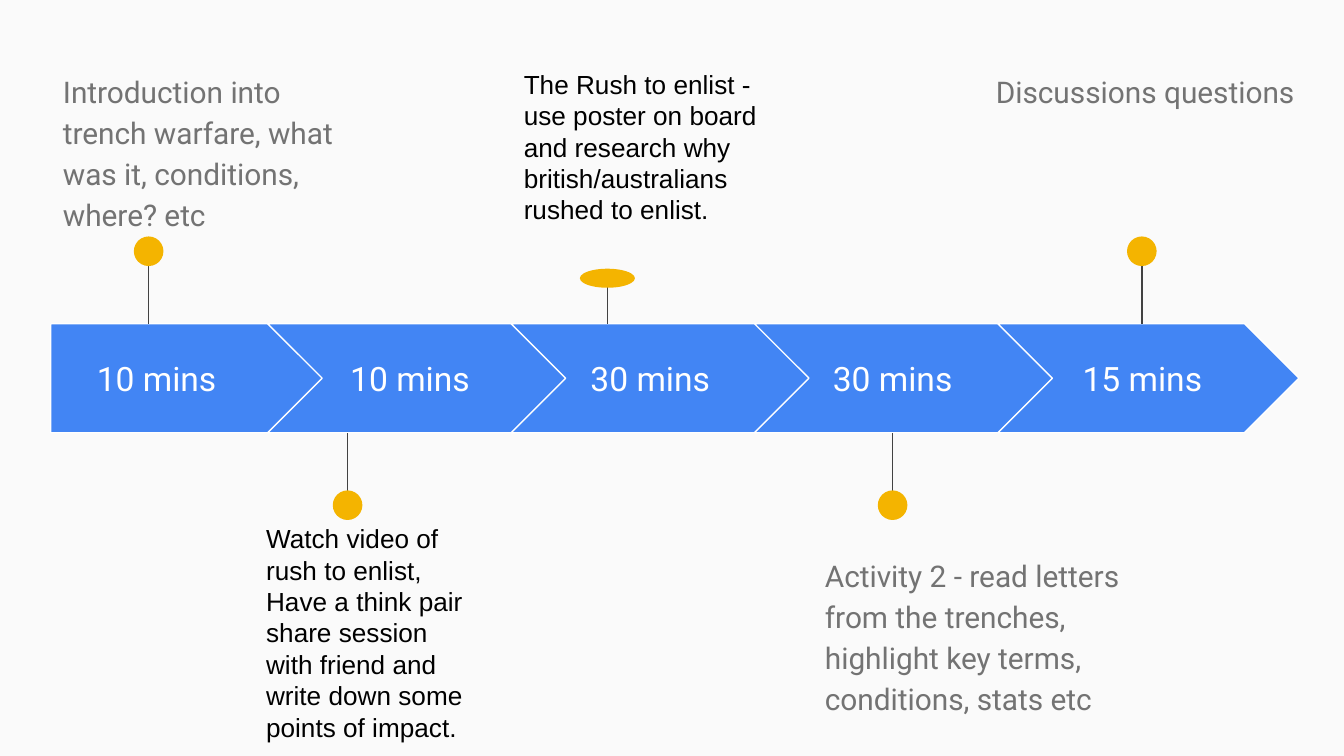
from lxml import etree
from pptx import Presentation
from pptx.dml.color import RGBColor
from pptx.enum.shapes import MSO_CONNECTOR, MSO_SHAPE
from pptx.enum.text import MSO_ANCHOR, PP_ALIGN
from pptx.oxml.ns import qn
from pptx.util import Cm, Pt

PLATE, CHEVRON, OVAL = MSO_SHAPE.PENTAGON, MSO_SHAPE.CHEVRON, MSO_SHAPE.OVAL
STRAIGHT = MSO_CONNECTOR.STRAIGHT
LEFT, CENTER = PP_ALIGN.LEFT, PP_ALIGN.CENTER
TOP, MIDDLE = MSO_ANCHOR.TOP, MSO_ANCHOR.MIDDLE

THEME = {
    "page": "FAFAFA", "band": "4285F4", "edge": "FFFFFF",
    "stem": "424242", "dot": "F4B400", "line": 0.75,
    # font, size, colour, line spacing, space after
    "time": ("Roboto", 18, "FFFFFF", 1, 0),
    "soft": ("Roboto", 16, "737373", 1.15, 16),
    "dark": ("Arial", 14, "000000", 1, 0),
}

ROUND, FLAT = (0.56, 0.56), (1.04, 0.36)
HIGH, LOW = 4.75, 9.55

# Lengths in cm: mid is the label centre, pin is (x, y, dot size),
# box is the note's (left, top, width, height).
STEPS = [
    {"time": "10 mins", "mid": 2.96, "pin": (2.81, HIGH, ROUND),
     "note": "Introduction into trench warfare, what was it, conditions, where? etc",
     "style": "soft", "box": (0.94, 1.04, 6.22, 2.51)},
    {"time": "10 mins", "mid": 7.75, "pin": (6.57, LOW, ROUND),
     "note": "Watch video of rush to enlist, Have a think pair share session "
             "with friend and write down some points of impact.",
     "style": "dark", "box": (4.78, 9.63, 4.27, 3.43)},
    {"time": "30 mins", "mid": 12.29, "pin": (11.48, 5.26, FLAT),
     "note": "The Rush to enlist - use poster on board and research why "
             "british/australians rushed to enlist.",
     "style": "dark", "box": (9.65, 1.04, 5.69, 3.43)},
    {"time": "30 mins", "mid": 16.87, "pin": (16.87, LOW, ROUND),
     "note": "Activity 2 - read letters from the trenches, highlight key terms, "
             "conditions, stats etc",
     "style": "soft", "box": (15.34, 10.19, 6.22, 3.68)},
    {"time": "15 mins", "mid": 21.59, "pin": (21.58, HIGH, ROUND),
     "note": "Discussions questions",
     "style": "soft", "box": (18.57, 1.04, 6.22, 2.51)},
]

BAND_TOP, BAND_HIGH = 6.12, 2.06
START, PITCH, WIDE, CUT = 0.46, 4.6, 5.69, 0.5
LABEL_WIDE, LABEL_HIGH = 3.66, 1.3


def color(name):
    return RGBColor.from_string(THEME[name])


def add_shape(slide, kind, box, fill, edge=None):
    shape = slide.shapes.add_shape(kind, *map(Cm, box))
    shape.shadow.inherit = False
    shape.fill.solid()
    shape.fill.fore_color.rgb = color(fill)
    if edge:
        shape.line.color.rgb = color(edge)
        shape.line.width = Pt(THEME["line"])
    else:
        shape.line.fill.background()
    return shape


def add_text(slide, text, box, style, align=LEFT, anchor=TOP):
    font, size, shade, spacing, after = THEME[style]
    frame = slide.shapes.add_textbox(*map(Cm, box)).text_frame
    frame.word_wrap = True
    frame.vertical_anchor = anchor
    frame.margin_left = frame.margin_right = Cm(0.25)
    frame.margin_top = frame.margin_bottom = Cm(0.25)
    para = frame.paragraphs[0]
    para.alignment = align
    para.line_spacing = spacing
    para.space_after = Pt(after)
    run = para.add_run()
    run.text = text
    run.font.name = font
    run.font.size = Pt(size)
    run.font.color.rgb = RGBColor.from_string(shade)


def add_arrow(slide, index):
    """Add one band segment; the first is a plate cut short on its left."""
    left = START + index * PITCH
    kind, trim = (CHEVRON, 0) if index else (PLATE, CUT)
    box = (left + trim, BAND_TOP, WIDE - trim, BAND_HIGH)
    arrow = add_shape(slide, kind, box, "band", "edge")
    arrow.adjustments[0] = 0.5


def add_pin(slide, x, y, size):
    """Add a dot and its stem to the nearer edge of the band."""
    wide, high = size
    end = BAND_TOP if y < BAND_TOP else BAND_TOP + BAND_HIGH
    stem = slide.shapes.add_connector(STRAIGHT, Cm(x), Cm(y), Cm(x), Cm(end))
    stem.line.color.rgb = color("stem")
    stem.line.width = Pt(THEME["line"])
    etree.SubElement(stem._element.spPr, qn("a:effectLst"))
    add_shape(slide, OVAL, (x - wide / 2, y - high / 2, wide, high), "dot")


def main():
    deck = Presentation()
    deck.slide_width, deck.slide_height = Cm(25.4), Cm(14.29)
    slide = deck.slides.add_slide(deck.slide_layouts[6])
    slide.background.fill.solid()
    slide.background.fill.fore_color.rgb = color("page")

    label_top = BAND_TOP + (BAND_HIGH - LABEL_HIGH) / 2
    for index, step in enumerate(STEPS):
        add_arrow(slide, index)
        label = (step["mid"] - LABEL_WIDE / 2, label_top, LABEL_WIDE, LABEL_HIGH)
        add_text(slide, step["time"], label, "time", CENTER, MIDDLE)
        add_pin(slide, *step["pin"])
        add_text(slide, step["note"], step["box"], step["style"])
    deck.save("out.pptx")


if __name__ == "__main__":
    main()
